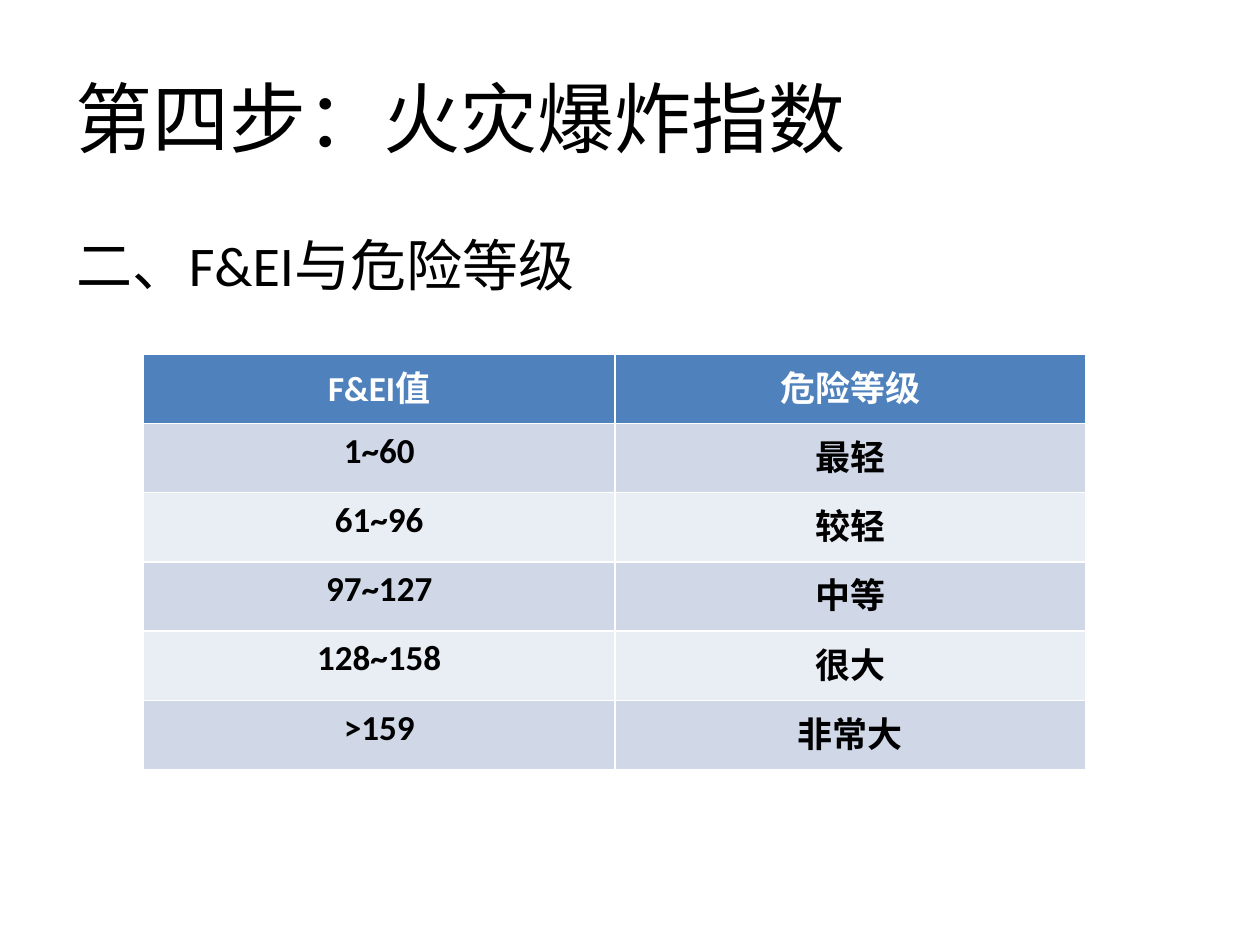
"""Build the slide on the fire and explosion index and its hazard levels."""
import pptx
import pptx.dml.color
import pptx.enum.text
import pptx.util
from pptx.util import Inches


def color(value):
    return pptx.dml.color.RGBColor.from_string(value)


class SlideBuilder:
    font = "Calibri"
    black = "000000"
    white = "FFFFFF"
    header_fill = "4F81BD"
    band_fills = ("D0D8E8", "E9EDF4")

    def __init__(self, presentation):
        self.slide = presentation.slides.add_slide(presentation.slide_layouts[5])
        background = self.slide.background.fill
        background.solid()
        background.fore_color.rgb = color(self.white)

    def add_text(self, frame, text, size, text_color, alignment, bold=False):
        paragraph = frame.paragraphs[0]
        paragraph.alignment = alignment
        paragraph.space_before = pptx.util.Pt(0)
        run = paragraph.add_run()
        run.text = text
        run.font.name = self.font
        run.font.size = pptx.util.Pt(size)
        run.font.bold = bold
        run.font.color.rgb = color(text_color)

    def title(self, text, left, top, width, height):
        shape = self.slide.shapes.title
        shape.left, shape.top = Inches(left), Inches(top)
        shape.width, shape.height = Inches(width), Inches(height)
        shape.text_frame.vertical_anchor = pptx.enum.text.MSO_ANCHOR.MIDDLE
        self.add_text(shape.text_frame, text, 44, self.black, pptx.enum.text.PP_ALIGN.LEFT)

    def text_box(self, text, left, top, width, height):
        shape = self.slide.shapes.add_textbox(
            Inches(left), Inches(top), Inches(width), Inches(height))
        shape.text_frame.word_wrap = True
        self.add_text(shape.text_frame, text, 32, self.black, pptx.enum.text.PP_ALIGN.LEFT)

    def table(self, rows, left, top, width, row_height):
        table = self.slide.shapes.add_table(
            len(rows), len(rows[0]), Inches(left), Inches(top),
            Inches(width), Inches(row_height * len(rows))).table
        for row_index, values in enumerate(rows):
            table.rows[row_index].height = Inches(row_height)
            header = row_index == 0
            fill = self.header_fill if header else self.band_fills[(row_index - 1) % 2]
            for column_index, value in enumerate(values):
                cell = table.cell(row_index, column_index)
                cell.fill.solid()
                cell.fill.fore_color.rgb = color(fill)
                self.add_text(cell.text_frame, value, 20,
                              self.white if header else self.black,
                              pptx.enum.text.PP_ALIGN.CENTER, bold=True)


def main():
    presentation = pptx.Presentation()
    presentation.slide_width = Inches(10)
    presentation.slide_height = Inches(7.5)
    builder = SlideBuilder(presentation)
    builder.title("第四步：火灾爆炸指数", 0.5, 0.3, 9, 1.25)
    builder.text_box("二、F&EI与危险等级", 0.51, 1.78, 9, 4.95)
    hazard_levels = [
        ("F&EI值", "危险等级"),
        ("1~60", "最轻"),
        ("61~96", "较轻"),
        ("97~127", "中等"),
        ("128~158", "很大"),
        (">159", "非常大"),
    ]
    builder.table(hazard_levels, 1.14, 2.81, 7.48, 0.55)
    presentation.save("out.pptx")


if __name__ == "__main__":
    main()
